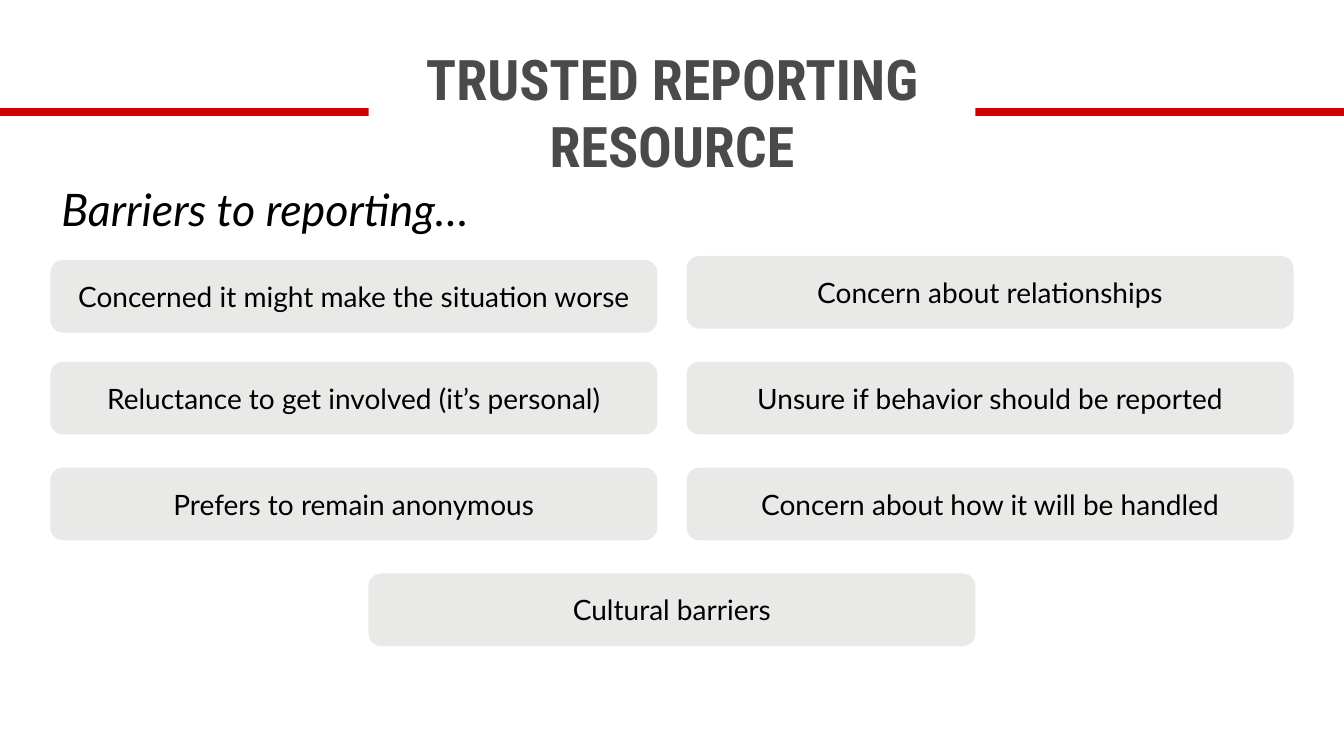
"""Build the slide on barriers to reporting."""
from pptx import Presentation
from pptx import util as u
from pptx.dml.color import RGBColor
from pptx.enum import shapes, text
from lxml import etree

COLORS = {"accent": "D00000", "title": "4A4A4A", "card": "E9EAE7",
          "text": "000000", "paper": "FFFFFF"}
WIDTH, HEIGHT = 13.33, 7.5
CARD_WIDTH, CARD_HEIGHT = 6, 0.7
LEFT, TOP = 0.51, 2.55
COLUMN_STEP, ROW_STEP = 6.31, 1.05
RULE_Y = 1.11
LOWERED = 0.04

BARRIERS = [
    (0, 0, LOWERED, "Concerned it might make the situation worse"),
    (1, 0, 0, "Concern about relationships"),
    (0, 1, 0, "Reluctance to get involved (it’s personal)"),
    (1, 1, 0, "Unsure if behavior should be reported"),
    (0, 2, 0, "Prefers to remain anonymous"),
    (1, 2, 0, "Concern about how it will be handled"),
    (0.5, 3, 0, "Cultural barriers"),
]


def color(name):
    """Return the named colour."""
    return RGBColor.from_string(COLORS[name])


def box(left, top, width, height):
    """Return a box given in inches as lengths."""
    return [u.Inches(value) for value in (left, top, width, height)]


def write(shape, words, size, font_name, ink, align, bold=False, italic=False):
    """Put one formatted paragraph in a shape."""
    frame = shape.text_frame
    frame.text = words
    frame.word_wrap = True
    paragraph = frame.paragraphs[0]
    paragraph.alignment = align
    font = paragraph.runs[0].font
    font.name, font.size = font_name, u.Pt(size)
    font.bold, font.italic = bold, italic
    font.color.rgb = color(ink)


def add_rule(slide):
    """Draw the full-width line behind the title."""
    y = u.Inches(RULE_Y)
    rule = slide.shapes.add_connector(
        shapes.MSO_CONNECTOR.STRAIGHT, 0, y, u.Inches(WIDTH), y)
    rule.line.color.rgb = color("accent")
    rule.line.width = u.Pt(6)
    namespace = "http://schemas.openxmlformats.org/drawingml/2006/main"
    etree.SubElement(rule._element.spPr, f"{{{namespace}}}effectLst")
    slide.shapes.title._element.addprevious(rule._element)


def format_title(slide, words):
    """Place the title over the middle of the line."""
    title = slide.shapes.title
    width, height = 6.02, 1.36
    title.left, title.top, title.width, title.height = box(
        (WIDTH - width) / 2, RULE_Y - height / 2, width, height)
    title.fill.solid()
    title.fill.fore_color.rgb = color("paper")
    write(title, words, 40, "Roboto Condensed", "title",
          text.PP_ALIGN.CENTER, bold=True)
    title.text_frame.vertical_anchor = text.MSO_ANCHOR.MIDDLE
    title.text_frame.auto_size = text.MSO_AUTO_SIZE.NONE


def add_heading(slide, words):
    """Add the italic heading above the cards."""
    heading = slide.shapes.add_textbox(*box(LEFT, 1.75, CARD_WIDTH, 0.64))
    write(heading, words, 32, "Lato", "text", text.PP_ALIGN.LEFT, italic=True)
    heading.text_frame.auto_size = text.MSO_AUTO_SIZE.SHAPE_TO_FIT_TEXT


def add_card(slide, column, row, drop, words):
    """Add a rounded card at a grid position."""
    card = slide.shapes.add_shape(
        shapes.MSO_SHAPE.ROUNDED_RECTANGLE,
        *box(LEFT + column * COLUMN_STEP, TOP + row * ROW_STEP + drop,
             CARD_WIDTH, CARD_HEIGHT))
    card.shadow.inherit = False
    card.fill.solid()
    card.fill.fore_color.rgb = color("card")
    card.line.color.rgb = color("card")
    card.line.width = u.Pt(1.5)
    write(card, words, 20, "Lato", "text", text.PP_ALIGN.CENTER)
    card.text_frame.vertical_anchor = text.MSO_ANCHOR.MIDDLE


def main():
    """Build and save the presentation."""
    presentation = Presentation()
    presentation.slide_width = u.Inches(WIDTH)
    presentation.slide_height = u.Inches(HEIGHT)
    slide = presentation.slides.add_slide(presentation.slide_layouts[5])
    slide.background.fill.solid()
    slide.background.fill.fore_color.rgb = color("paper")
    format_title(slide, "TRUSTED REPORTING RESOURCE")
    add_rule(slide)
    for column, row, drop, words in BARRIERS:
        add_card(slide, column, row, drop, words)
    add_heading(slide, "Barriers to reporting…")
    presentation.save("out.pptx")


if __name__ == "__main__":
    main()
